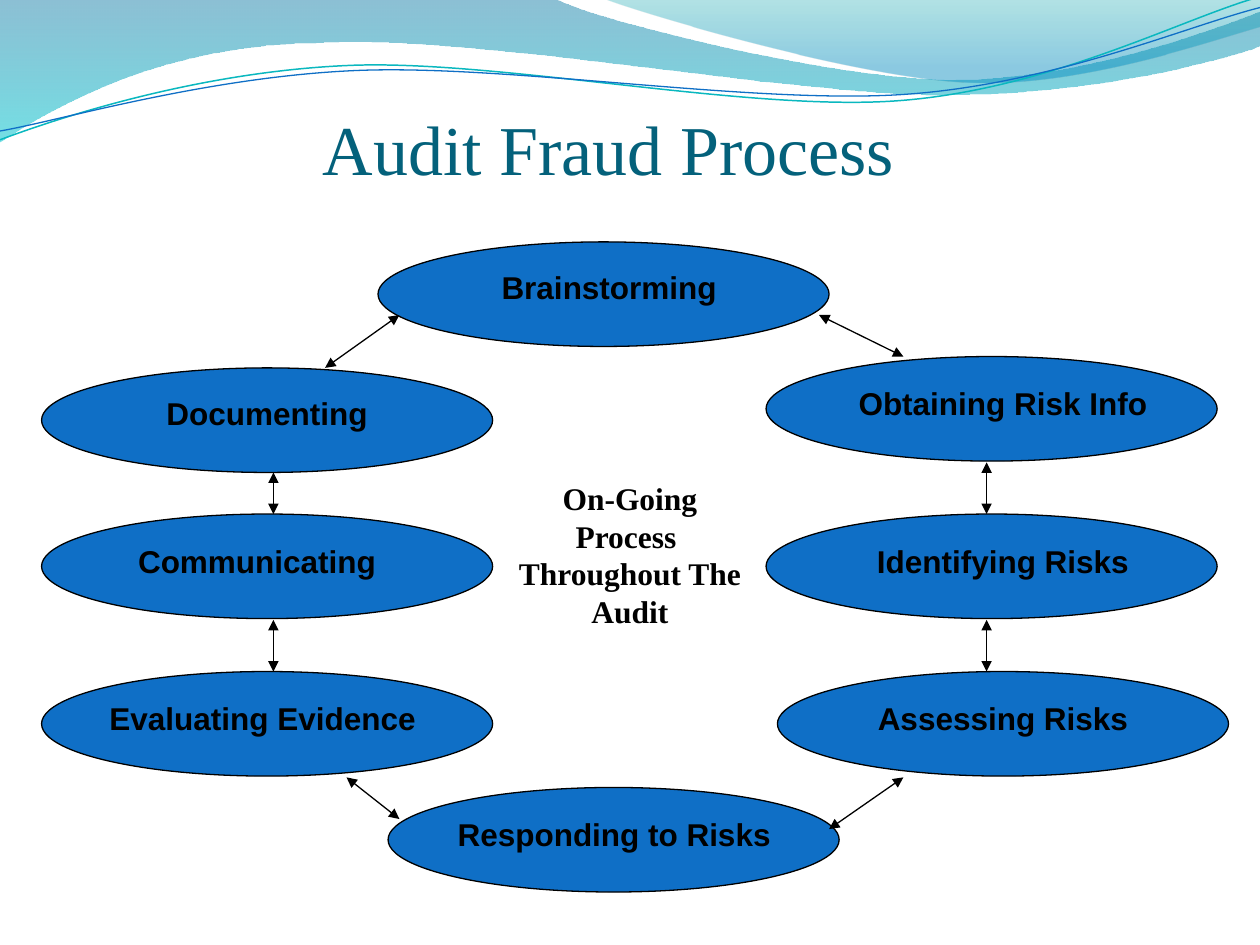
from lxml import etree
from pptx import Presentation
from pptx.dml.color import RGBColor
from pptx.enum.shapes import MSO_CONNECTOR, MSO_SHAPE
from pptx.enum.text import MSO_ANCHOR, MSO_AUTO_SIZE, PP_ALIGN
from pptx.oxml.ns import qn
from pptx.util import Inches, Pt

OVAL = MSO_SHAPE.OVAL
STRAIGHT = MSO_CONNECTOR.STRAIGHT
CENTER = PP_ALIGN.CENTER
BOTTOM = MSO_ANCHOR.BOTTOM
GROW = MSO_AUTO_SIZE.SHAPE_TO_FIT_TEXT

COLORS = {
    "oval": "0F6FC6", "ink": "000000", "title": "04617B", "teal_line": "0AB8BF",
    "deep_blue": "0074A1", "cyan": "00C6CF", "teal": "00A1A9", "sky": "008BBF",
}
SERIF, SANS = "Times New Roman", "Arial"
OVAL_SIZE = (3.58, 0.83)

# Each path is a start point followed by lines (2 numbers) and Bézier curves (6 numbers).
WAVE_BACK = [
    (0, -0.01), (4.4, -0.01), (4.76, 0.17, 6.64, 0.63, 7.58, 0.63),
    (8.53, 0.63, 9.58, 0.26, 10, 0.09), (10.01, 0.36),
    (9.83, 0.44, 8.7, 0.76, 7.46, 0.75), (6.22, 0.75, 3.82, 0.28, 2.57, 0.34),
    (1.29, 0.35, 0.46, 0.83, -0.01, 1.13), (0, -0.01),
]
WAVE_FRONT = [
    (4.79, -0.01), (5.09, 0.11, 6.82, 0.62, 7.69, 0.65),
    (8.56, 0.69, 9.61, 0.32, 10, 0.21), (10, 0), (4.79, -0.01),
]
TEAL_CURVE = [
    (0, 1.11), (0.48, 0.93, 1.58, 0.57, 2.77, 0.52),
    (3.95, 0.47, 5.93, 0.89, 7.13, 0.8), (8.33, 0.71, 9.38, 0.15, 9.98, -0.02),
]
BLUE_CURVE = [
    (0, 1.04), (0.47, 0.96, 1.64, 0.61, 2.83, 0.56),
    (4.03, 0.51, 5.97, 0.83, 7.17, 0.75), (8.36, 0.67, 9.41, 0.21, 10, 0.06),
]

# Label, left and top of the oval, left, top and width of the label
STEPS = [
    ("Brainstorming", 3, 1.92, 3.67, 2.08, 2.33),
    ("Obtaining Risk Info", 6.08, 2.83, 6.42, 3, 3.08),
    ("Documenting", 0.33, 2.92, 0.58, 3.08, 3.08),
    ("Identifying Risks", 6.08, 4.08, 6.42, 4.25, 3.08),
    ("Communicating", 0.33, 4.08, 0.5, 4.25, 3.08),
    ("Assessing Risks", 6.17, 5.33, 6.42, 5.5, 3.08),
    ("Evaluating Evidence", 0.33, 5.33, 0.5, 5.5, 3.17),
    ("Responding to Risks", 3.08, 6.25, 3.25, 6.42, 3.25),
]
ARROWS = [
    (6.5, 2.5, 7.17, 2.83), (7.83, 3.67, 7.83, 4.08), (7.83, 4.92, 7.83, 5.33),
    (7.17, 6.17, 6.58, 6.58), (3.17, 6.5, 2.75, 6.17), (2.17, 5.33, 2.17, 4.92),
    (2.17, 4.08, 2.17, 3.75), (2.58, 2.92, 3.17, 2.5),
]


def color(name):
    return RGBColor.from_string(COLORS[name])


def set_line(shape, name, width):
    shape.line.color.rgb = color(name)
    shape.line.width = Pt(width)


def bend(shape, edge, numbers):
    """Turn a straight edge of a freeform into a cubic Bézier curve."""
    edge.tag = qn("a:cubicBezTo")
    edge.clear()
    for x, y in zip(numbers[::2], numbers[1::2]):
        point = etree.SubElement(edge, qn("a:pt"))
        point.set("x", str(Inches(x) - shape.left))
        point.set("y", str(Inches(y) - shape.top))


def add_outline(page, path, close):
    anchors = [tuple(map(Inches, segment[-2:])) for segment in path]
    builder = page.shapes.build_freeform(*anchors[0])
    builder.add_line_segments(anchors[1:], close=close)
    shape = builder.convert_to_shape()
    shape.shadow.inherit = False
    edges = list(shape._element.spPr.iter(qn("a:lnTo")))
    for edge, segment in zip(edges, path[1:]):
        if len(segment) == 6:
            curve = etree.Element(qn("a:cubicBezTo"))
            edge.getparent().replace(edge, curve)
            bend(shape, curve, segment)
    return shape


def add_wave(page, path, stops):
    """Add a band with a see-through top-to-bottom gradient of (position, colour, opacity %)."""
    wave = add_outline(page, path, True)
    wave.line.fill.background()
    wave.fill.gradient()
    wave.fill.gradient_angle = 270
    for stop, (position, name, _) in zip(wave.fill.gradient_stops, stops):
        stop.position = position
        stop.color.rgb = color(name)
    tints = wave._element.spPr.iter(qn("a:srgbClr"))
    for tint, (_, _, opacity) in zip(list(tints), stops):
        etree.SubElement(tint, qn("a:alpha")).set("val", str(opacity * 1000))


def add_curve(page, path, name, width):
    curve = add_outline(page, path, False)
    curve.fill.background()
    set_line(curve, name, width)


def add_label(page, text, bounds, font, size=18, name="ink", bold=True):
    box = page.shapes.add_textbox(*map(Inches, bounds))
    frame = box.text_frame
    frame.word_wrap = True
    frame.text = text
    para = frame.paragraphs[0]
    para.alignment = CENTER
    span = para.runs[0].font
    span.name, span.size, span.bold = font, Pt(size), bold
    span.color.rgb = color(name)
    return frame


def add_title(page, text):
    frame = add_label(page, text, (0.33, 0.58, 9, 0.92), SERIF, 40, "title", False)
    frame.vertical_anchor = BOTTOM
    frame.margin_left = frame.margin_right = frame.margin_bottom = 0


def add_oval(page, left, top):
    oval = page.shapes.add_shape(OVAL, *map(Inches, (left, top, *OVAL_SIZE)))
    oval.shadow.inherit = False
    oval.fill.solid()
    oval.fill.fore_color.rgb = color("oval")
    set_line(oval, "ink", 0.75)


def add_double_arrow(page, ends):
    arrow = page.shapes.add_connector(STRAIGHT, *map(Inches, ends))
    set_line(arrow, "ink", 0.75)
    outline = arrow.line._get_or_add_ln()
    for tag in ("a:headEnd", "a:tailEnd"):
        etree.SubElement(outline, qn(tag)).set("type", "triangle")
    etree.SubElement(arrow._element.spPr, qn("a:effectLst"))


def main():
    deck = Presentation()
    deck.slide_width, deck.slide_height = Inches(10), Inches(7.5)
    page = deck.slides.add_slide(deck.slide_layouts[6])

    add_wave(page, WAVE_BACK, [(0, "deep_blue", 45), (1, "cyan", 55)])
    add_wave(page, WAVE_FRONT, [(0, "teal", 30), (0.8, "sky", 45)])
    add_curve(page, TEAL_CURVE, "teal_line", 0.85)
    add_curve(page, BLUE_CURVE, "oval", 0.75)
    add_title(page, "Audit Fraud Process")

    for _, left, top, *_ in STEPS:
        add_oval(page, left, top)
    for text, _, _, left, top, width in STEPS:
        add_label(page, text, (left, top, width, 0.5), SANS).auto_size = GROW
    for ends in ARROWS:
        add_double_arrow(page, ends)
    add_label(page, "On-Going Process  Throughout The Audit",
              (4, 3.75, 2, 1.31), SERIF).auto_size = GROW

    deck.save("out.pptx")


if __name__ == "__main__":
    main()
